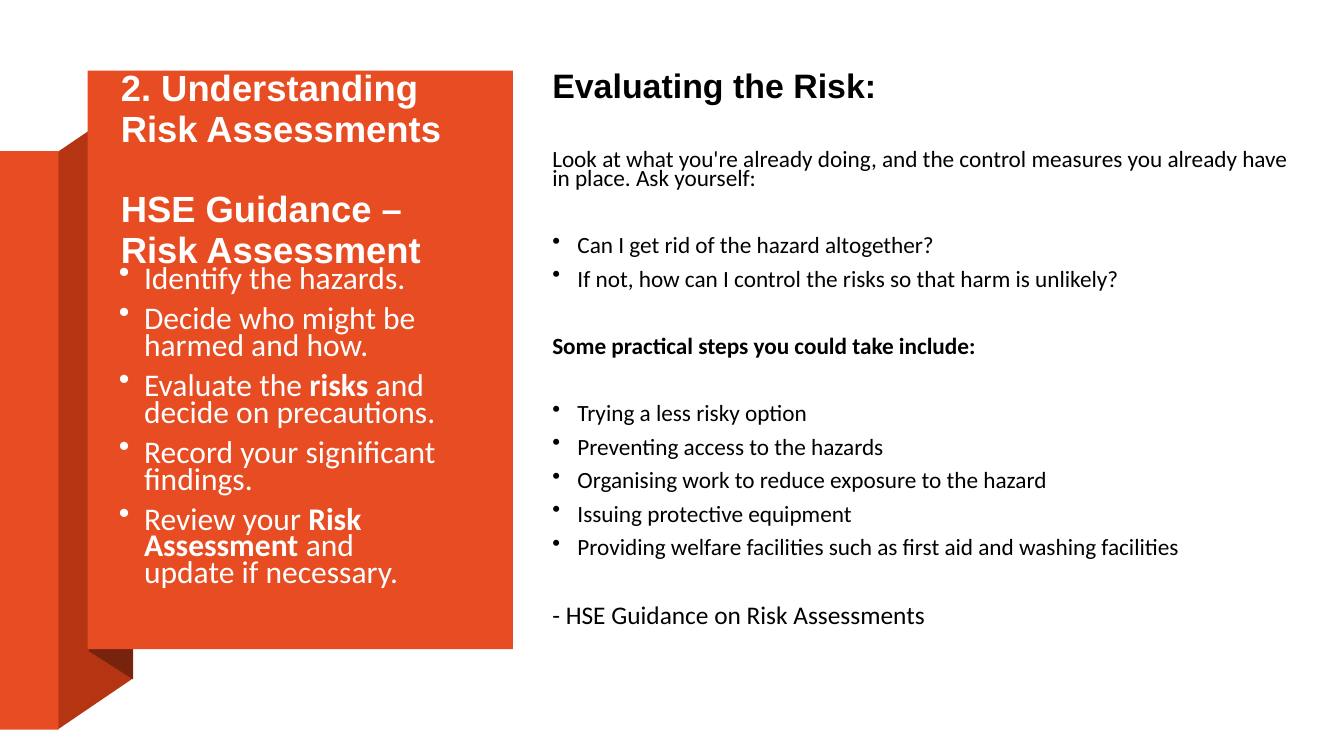
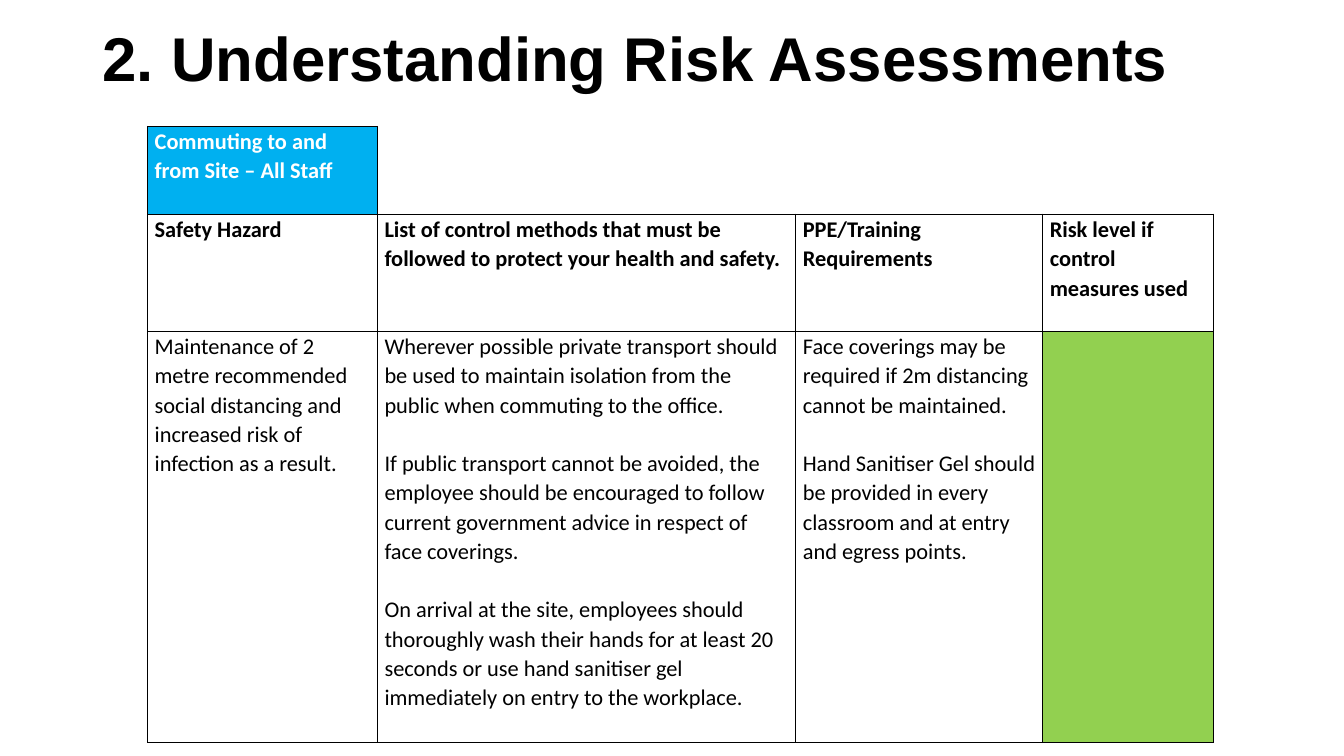
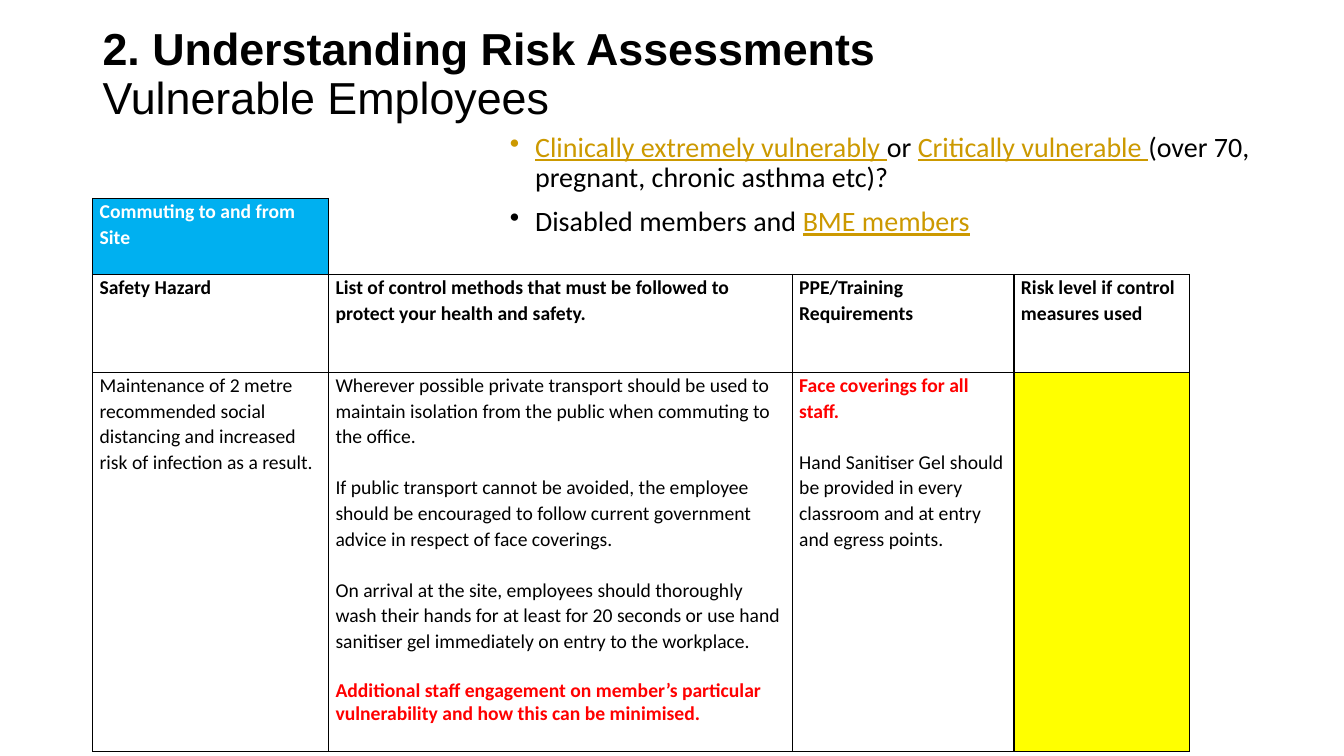
from dataclasses import dataclass

import pptx
import pptx.dml.color
import pptx.enum.shapes
import pptx.enum.text
import pptx.oxml
import pptx.oxml.ns
import pptx.util
from pptx.util import Pt

COLORS = {
    "black": "000000", "white": "FFFFFF", "orange": "E84C22", "fold": "B53513",
    "shade": "78230D", "blue": "00B0F0", "green": "92D050", "yellow": "FFFF00",
    "red": "FF0000", "link": "CC9900",
}
HEADING_FONT, BODY_FONT = "Arial", "Calibri"
BORDER_SIDES = ("L", "R", "T", "B")


@dataclass(frozen=True)
class Run:
    text: str
    bold: bool | None = None
    color: str | None = None
    underline: bool | None = None


@dataclass(frozen=True)
class Para:
    content: str | tuple[Run, ...]
    size: float
    font: str = BODY_FONT
    color: str = "black"
    bold: bool = False
    bullet: bool = False
    before: float = 0
    spacing: float = 1


@dataclass(frozen=True)
class Box:
    left: float
    top: float
    width: float
    height: float


@dataclass(frozen=True)
class Cell:
    paragraphs: tuple[Para, ...] = ()
    fill: str | None = None
    borders: str = "LRTB"


def rgb(name: str) -> pptx.dml.color.RGBColor:
    return pptx.dml.color.RGBColor.from_string(COLORS[name])


def write_paragraphs(frame, paragraphs: tuple[Para, ...]) -> None:
    for index, item in enumerate(paragraphs):
        paragraph = frame.add_paragraph() if index else frame.paragraphs[0]
        paragraph.line_spacing = item.spacing
        paragraph.space_before = Pt(item.before)
        font = paragraph.font
        font.name, font.size, font.bold = item.font, Pt(item.size), item.bold
        font.color.rgb = rgb(item.color)
        if item.bullet:
            properties = paragraph._p.get_or_add_pPr()
            properties.set("marL", str(Pt(18)))
            properties.set("indent", str(-Pt(18)))
            bullet = pptx.oxml.parse_xml(
                f'<a:buChar {pptx.oxml.ns.nsdecls("a")} char="•"/>')
            properties.insert_element_before(bullet, "a:tabLst", "a:defRPr", "a:extLst")
        parts = (Run(item.content),) if isinstance(item.content, str) else item.content
        for part in parts:
            run = paragraph.add_run()
            run.text = part.text
            if part.bold is not None:
                run.font.bold = part.bold
            if part.underline is not None:
                run.font.underline = part.underline
            if part.color:
                run.font.color.rgb = rgb(part.color)


def add_text(slide, box: Box, paragraphs: tuple[Para, ...], middle: bool = False) -> None:
    shape = slide.shapes.add_textbox(Pt(box.left), Pt(box.top), Pt(box.width), Pt(box.height))
    frame = shape.text_frame
    frame.word_wrap = True
    anchor = pptx.enum.text.MSO_ANCHOR
    frame.vertical_anchor = anchor.MIDDLE if middle else anchor.TOP
    write_paragraphs(frame, paragraphs)


def paint(shape, color: str) -> None:
    shape.shadow.inherit = False
    shape.fill.solid()
    shape.fill.fore_color.rgb = rgb(color)
    shape.line.fill.background()


def add_panel(slide, box: Box, color: str) -> None:
    rectangle = pptx.enum.shapes.MSO_SHAPE.RECTANGLE
    paint(slide.shapes.add_shape(
        rectangle, Pt(box.left), Pt(box.top), Pt(box.width), Pt(box.height)), color)


def add_fold(slide, points: list[tuple[float, float]], color: str) -> None:
    corners = [(Pt(x), Pt(y)) for x, y in points]
    builder = slide.shapes.build_freeform(*corners[0], scale=1.0)
    builder.add_line_segments(corners[1:], close=True)
    paint(builder.convert_to_shape(), color)


def set_borders(cell, visible: str) -> None:
    properties = cell._tc.get_or_add_tcPr()
    for side in BORDER_SIDES:
        fill = (f'<a:solidFill><a:srgbClr val="{COLORS["black"]}"/></a:solidFill>'
                if side in visible else "<a:noFill/>")
        properties.append(pptx.oxml.parse_xml(
            f'<a:ln{side} {pptx.oxml.ns.nsdecls("a")} w="{Pt(1)}">{fill}</a:ln{side}>'))


def add_risk_table(slide, left: float, top: float, columns: list[float],
                   heights: list[float], rows: list[list[Cell]]) -> None:
    table = slide.shapes.add_table(
        len(rows), len(columns), Pt(left), Pt(top), Pt(sum(columns)), Pt(sum(heights))).table
    table.first_row = table.horz_banding = False
    for column, width in zip(table.columns, columns):
        column.width = Pt(width)
    for row, height, items in zip(table.rows, heights, rows):
        row.height = Pt(height)
        for cell, item in zip(row.cells, items):
            cell.margin_left = cell.margin_right = Pt(5)
            cell.margin_top = cell.margin_bottom = 0
            set_borders(cell, item.borders)
            if item.fill:
                cell.fill.solid()
                cell.fill.fore_color.rgb = rgb(item.fill)
            else:
                cell.fill.background()
            write_paragraphs(cell.text_frame, item.paragraphs)
    table.cell(0, 1).merge(table.cell(0, len(columns) - 1))


def risk_rows(size: float, task: str, controls: list[str], extra: tuple[Para, ...],
              protection: tuple[Para, ...], level: str) -> list[list[Cell]]:
    def lines(*texts: str, **style) -> tuple[Para, ...]:
        return tuple(Para(text, size, spacing=1.07, before=size * 1.3 if index else 0, **style)
                     for index, text in enumerate(texts))

    headings = (
        "Safety Hazard",
        "List of control methods that must be followed to protect your health and safety.",
        "PPE/Training Requirements",
        "Risk level if control measures used",
    )
    hazard = ("Maintenance of 2 metre recommended social distancing and increased risk "
              "of infection as a result.")
    gel = Para("Hand Sanitiser Gel should be provided in every classroom and at entry "
               "and egress points.", size, spacing=1.07, before=size * 1.3)
    return [
        [Cell(lines(task, color="white", bold=True), "blue"),
         Cell(borders="LB"), Cell(borders="B"), Cell(borders="B")],
        [Cell(lines(heading, bold=True)) for heading in headings],
        [Cell(lines(hazard)), Cell(lines(*controls) + extra),
         Cell(protection + (gel,)), Cell(fill=level)],
    ]


def title(text: str, size: float, color: str = "black", bold: bool = True,
          before: float = 0, spacing: float = 0.9) -> Para:
    return Para(text, size, HEADING_FONT, color, bold, before=before, spacing=spacing)


def build_guidance(slide) -> None:
    add_fold(slide, [(41, 521.3), (95, 484.6), (95, 72), (41, 108.7)], "fold")
    add_panel(slide, Box(0, 108, 41.8, 413.3), "orange")
    add_fold(slide, [(63.4, 465.1), (95, 485.3), (95, 71.3), (63.4, 50.4)], "shade")
    add_panel(slide, Box(62.6, 50.4, 303.8, 413.3), "orange")
    add_text(slide, Box(79.2, 63.4, 250.6, 115.9), (
        title(MAIN_TITLE, 26, "white", spacing=0.94),
        title("HSE Guidance – Risk Assessment", 26, "white", before=28, spacing=0.94),
    ), middle=True)
    steps = (
        "Identify the hazards.",
        "Decide who might be harmed and how.",
        (Run("Evaluate the "), Run("risks", True), Run(" and decide on precautions.")),
        "Record your significant findings.",
        (Run("Review your "), Run("Risk Assessment", True), Run(" and update if necessary.")),
    )
    add_text(slide, Box(77.8, 187.9, 252, 235.4), tuple(
        Para(step, 22.5, color="white", bullet=True, before=10, spacing=0.7)
        for step in steps))

    def line(text: str, before: float = 10, **style) -> Para:
        return Para(text, before=before, spacing=0.7, **{"size": 16.6, **style})

    add_text(slide, Box(387.4, 50.4, 540.7, 430.6), (
        line("Evaluating the Risk:", size=24.2, font=HEADING_FONT, bold=True),
        line("Look at what you're already doing, and the control measures you already "
             "have in place. Ask yourself:", 34),
        line("Can I get rid of the hazard altogether?", 34, bullet=True),
        line("If not, how can I control the risks so that harm is unlikely?", bullet=True),
        line("Some practical steps you could take include:", 34, bold=True),
        line("Trying a less risky option", 34, bullet=True),
        line("Preventing access to the hazards", bullet=True),
        line("Organising work to reduce exposure to the hazard", bullet=True),
        line("Issuing protective equipment", bullet=True),
        line("Providing welfare facilities such as first aid and washing facilities",
             bullet=True),
        line("- HSE Guidance on Risk Assessments", 34, size=18.1),
    ))


def build_all_staff(slide) -> None:
    add_text(slide, Box(66.2, 6, 828, 75.6), (title(MAIN_TITLE, 44.1),), middle=True)
    protection = Para("Face coverings may be required if 2m distancing cannot be maintained.",
                      16, spacing=1.07)
    rows = risk_rows(16, "Commuting to and from Site – All Staff",
                     [*TRAVEL_CONTROLS, ARRIVAL.format("20 seconds")],
                     (), (protection,), "green")
    add_risk_table(slide, 105.5, 90.3, [164.2, 298.8, 176.4, 121.7], [62.7, 83.6, 293.5], rows)


def build_vulnerable(slide) -> None:
    add_text(slide, Box(66.2, 10.1, 828, 87.8), (
        title(MAIN_TITLE, 32), title("Vulnerable Employees", 32, bold=False)), middle=True)

    def link(text: str) -> Run:
        return Run(text, color="link", underline=True)

    groups = (
        (link("Clinically extremely vulnerably "), Run("or "), link("Critically vulnerable "),
         Run("(over 70, pregnant, chronic asthma etc)?")),
        (Run("Disabled members and "), link("BME members")),
    )
    add_text(slide, Box(357.1, 91.4, 603, 87.8), tuple(
        Para(group, 20, bullet=True, before=10, spacing=0.9) for group in groups))
    engagement = Para("Additional staff engagement on member’s particular vulnerability "
                      "and how this can be minimised.", 14, color="red", bold=True, before=18)
    protection = Para("Face coverings for all staff.", 14, color="red", bold=True, spacing=1.07)
    rows = risk_rows(14, "Commuting to and from Site",
                     [*TRAVEL_CONTROLS, ARRIVAL.format("for 20 seconds")],
                     (engagement,), (protection,), "yellow")
    add_risk_table(slide, 66.2, 141.7, [168.5, 331.2, 158.4, 125.3], [54.3, 70.2, 270.5], rows)


MAIN_TITLE = "2. Understanding Risk Assessments"
TRAVEL_CONTROLS = (
    "Wherever possible private transport should be used to maintain isolation from the "
    "public when commuting to the office.",
    "If public transport cannot be avoided, the employee should be encouraged to follow "
    "current government advice in respect of face coverings.",
)
ARRIVAL = ("On arrival at the site, employees should thoroughly wash their hands for at least "
           "{} or use hand sanitiser gel immediately on entry to the workplace.")


def main() -> None:
    presentation = pptx.Presentation()
    presentation.slide_width, presentation.slide_height = Pt(960), Pt(540)
    for build in (build_guidance, build_all_staff, build_vulnerable):
        build(presentation.slides.add_slide(presentation.slide_layouts[6]))
    presentation.save("out.pptx")


if __name__ == "__main__":
    main()
